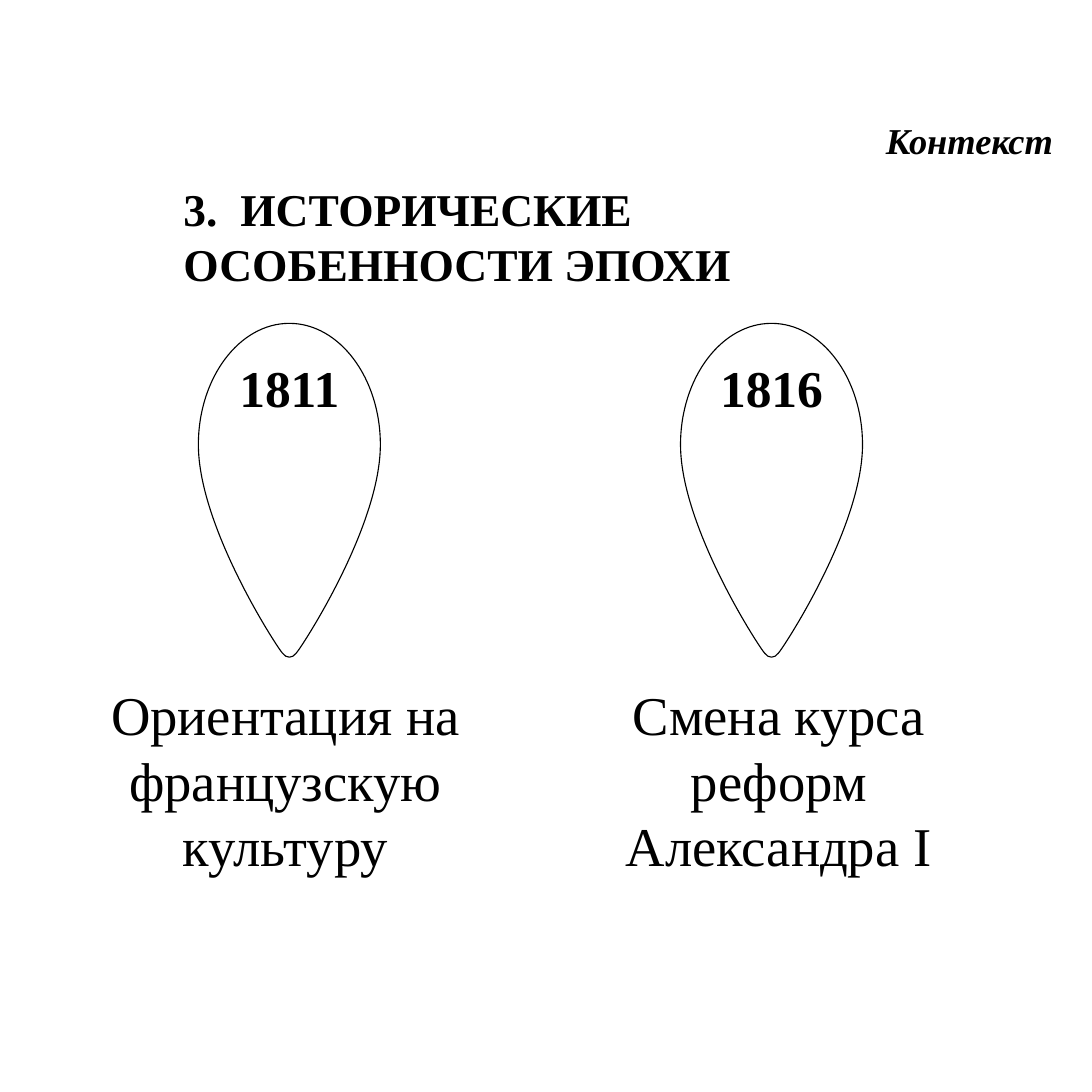
from dataclasses import dataclass

from lxml.etree import SubElement
from pptx import Presentation
from pptx.dml.color import RGBColor
from pptx.enum.text import MSO_ANCHOR, PP_ALIGN
from pptx.oxml.ns import qn
from pptx.util import Pt


@dataclass(frozen=True)
class Theme:
    """Hold the colours, font and type sizes of the slide."""
    ink: RGBColor = RGBColor(0, 0, 0)
    font: str = "Times New Roman"
    label: float = 24
    title: float = 30
    year: float = 34
    caption: float = 36
    outline: float = 0.75


PIN_EXTREMES = [(0, 0), (-60, 80), (0, 220), (60, 80)]
PIN_CURVES = [
    [(-33, 0), (-60, 36), (-60, 80)],
    [(-60, 134.5), (-7.5, 214.5), (-4.5, 217.5)],
    [(-2, 221), (2, 221), (4.5, 217.5)],
    [(7.5, 214.5), (60, 134.5), (60, 80)],
    [(60, 36), (33, 0), (0, 0)],
]


def curve_outline(shape, curves, axis):
    """Replace the straight segments of a freeform with Bezier curves."""
    outline = next(shape._element.iter(qn("a:path")))
    for segment in outline.findall(qn("a:lnTo")):
        outline.remove(segment)
    close = outline.find(qn("a:close"))
    for curve in curves:
        bezier = SubElement(outline, qn("a:cubicBezTo"))
        for x, y in curve:
            SubElement(bezier, qn("a:pt"), x=str(Pt(axis + x)), y=str(Pt(y)))
    outline.append(close)


def write_text(shape, text, theme, *, size, bold=False, italic=False,
               align=PP_ALIGN.CENTER, anchor=MSO_ANCHOR.TOP, top_inset=3, tab=None):
    """Write one formatted paragraph into a shape."""
    frame = shape.text_frame
    frame.word_wrap = True
    frame.vertical_anchor = anchor
    frame.margin_left = frame.margin_right = Pt(5)
    frame.margin_top, frame.margin_bottom = Pt(top_inset), Pt(3)
    para = frame.paragraphs[0]
    para.alignment = align
    if tab:
        tabs = SubElement(para._p.get_or_add_pPr(), qn("a:tabLst"))
        SubElement(tabs, qn("a:tab"), pos=str(Pt(tab)), algn="l")
    span = para.add_run()
    span.text = text
    span.font.name = theme.font
    span.font.size = Pt(size)
    span.font.bold, span.font.italic = bold, italic
    span.font.color.rgb = theme.ink


class SlideWriter:
    """Draw the elements of one slide in a shared style."""

    def __init__(self, page, theme):
        """Keep the slide and its theme."""
        self.page = page
        self.theme = theme

    def text(self, text, left, top, width, height, **style):
        """Add a text box."""
        box = self.page.shapes.add_textbox(Pt(left), Pt(top), Pt(width), Pt(height))
        write_text(box, text, self.theme, **style)

    def pin(self, year, center, top):
        """Add a pin that carries a year."""
        points = [(Pt(center + x), Pt(top + y)) for x, y in PIN_EXTREMES]
        builder = self.page.shapes.build_freeform(*points[0])
        builder.add_line_segments(points[1:], close=True)
        shape = builder.convert_to_shape()
        curve_outline(shape, PIN_CURVES, axis=60)
        shape.shadow.inherit = False
        shape.fill.background()
        shape.line.color.rgb = self.theme.ink
        shape.line.width = Pt(self.theme.outline)
        write_text(shape, year, self.theme, size=self.theme.year, bold=True, top_inset=21.5)


def main():
    """Build and save the slide."""
    deck = Presentation()
    deck.slide_width = deck.slide_height = Pt(720)
    theme = Theme()
    writer = SlideWriter(deck.slides.add_slide(deck.slide_layouts[6]), theme)
    events = [
        ("1811", 190.8, 65.2, "Ориентация на французскую культуру"),
        ("1816", 508.7, 390.5, "Смена курса реформ Александра I"),
    ]
    for year, center, left, caption in events:
        writer.text(caption, left, 446, 246, 136, size=theme.caption)
        writer.pin(year, center, 213.2)
    writer.text("3.\tИСТОРИЧЕСКИЕ ОСОБЕННОСТИ ЭПОХИ", 116, 152.5, 526, 42, size=theme.title,
                bold=True, align=PP_ALIGN.LEFT, anchor=MSO_ANCHOR.BOTTOM, tab=37.5)
    writer.text("Контекст", 577.2, 74.8, 124, 34.5, size=theme.label, bold=True, italic=True)
    deck.save("out.pptx")


if __name__ == "__main__":
    main()
